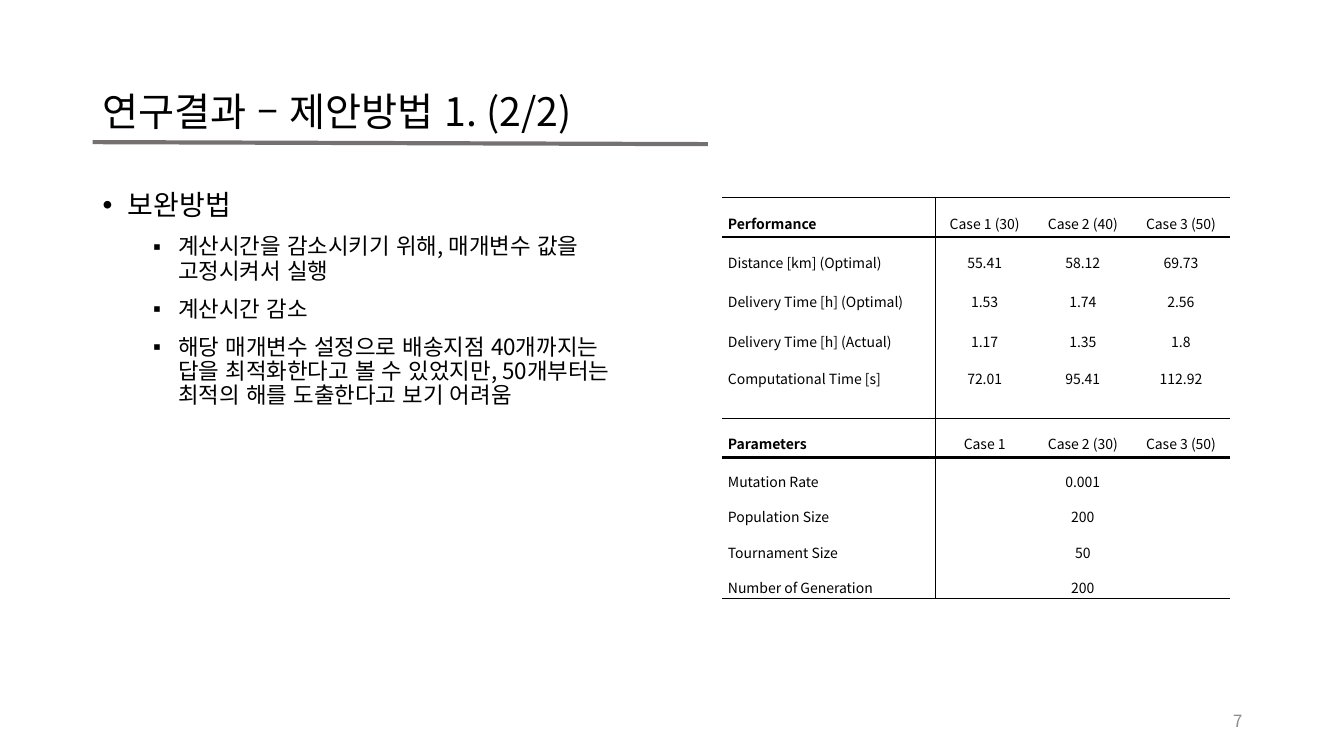
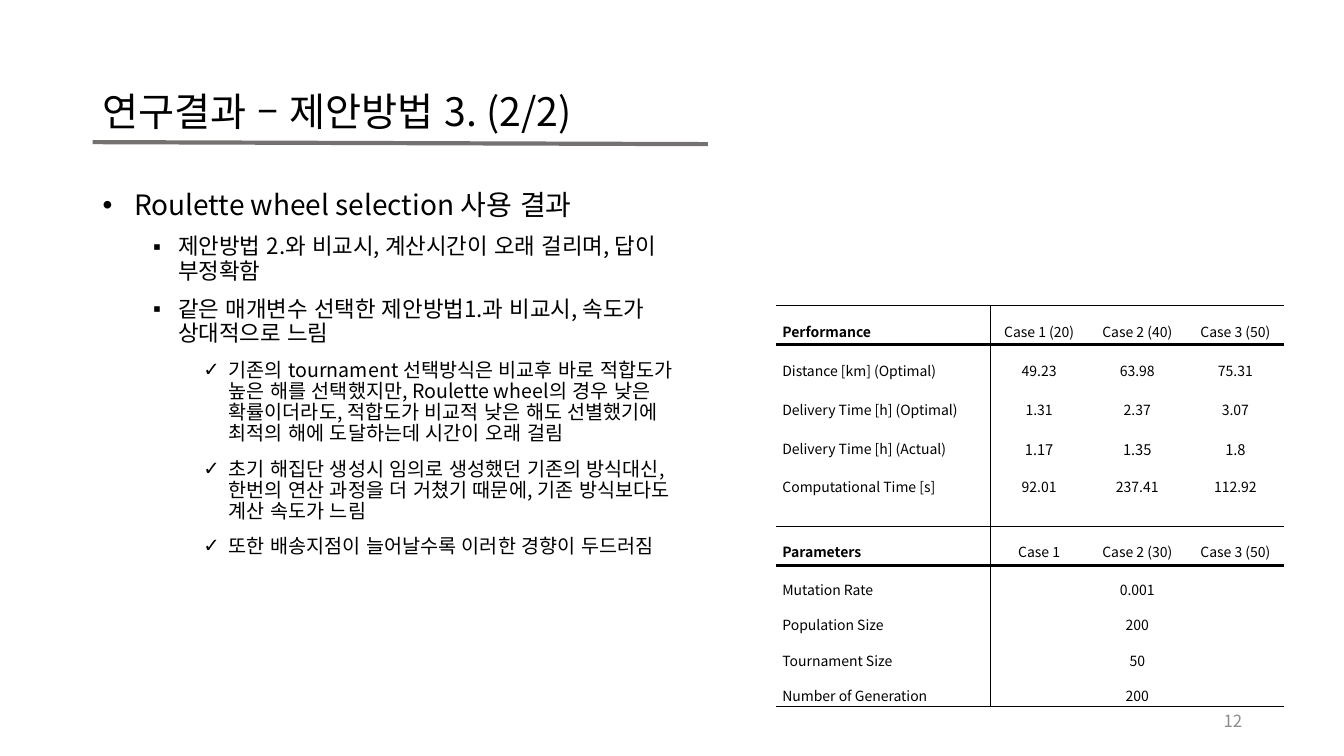
from lxml.etree import SubElement as Sub
from pptx import Presentation
from pptx.dml.color import RGBColor as RGB
from pptx.enum.lang import MSO_LANGUAGE_ID as LANG
from pptx.enum.shapes import MSO_CONNECTOR as CON
from pptx.enum.text import MSO_ANCHOR as ANC, PP_ALIGN as AL
from pptx.oxml.ns import qn
from pptx.util import Inches, Pt

BLACK = RGB(0x00, 0x00, 0x00)
GREY = RGB(0x76, 0x71, 0x71)
PALE = RGB(0x8C, 0x8C, 0x8C)
FONT = "Noto Sans CJK KR"
PLAIN = "{2D5ABB26-0587-4C30-8999-92F81FD0307C}"
THIN, THICK = 0.28, 1.98
EDGES = {0: THIN, 1: THICK, 6: THIN, 7: THICK, 11: THIN}
WIDTH, FIRST = 5.04, 2.12
COLS = [FIRST] + [(WIDTH - FIRST) / 3] * 3
TALL, LOW, GAP = 0.39, 0.35, 0.28
ROWS = [TALL] * 4 + [LOW, GAP, TALL] + [LOW] * 4
LEVELS = [("•", 20), ("▪", 16), ("✓", 14)]
LABELS = [
    "Distance [km] (Optimal)",
    "Delivery Time [h] (Optimal)",
    "Delivery Time [h] (Actual)",
    "Computational Time [s]",
]
PARAMS = [
    ["Parameters", "Case 1", "Case 2 (30)", "Case 3 (50)"],
    ["Mutation Rate", "0.001"],
    ["Population Size", "200"],
    ["Tournament Size", "50"],
    ["Number of Generation", "200"],
]


class Deck:
    """Holds the shared style and the current slide."""

    def __init__(self):
        self.prs = Presentation()
        self.prs.slide_width = Inches(13.33)
        self.prs.slide_height = Inches(7.5)
        self.slide = None

    def start(self, title, page):
        self.slide = self.prs.slides.add_slide(self.prs.slide_layouts[6])
        head = self.box(0.92, 0.4, 11.5, 1.45, ANC.MIDDLE).paragraphs[0]
        head.line_spacing = 0.9
        self.run(head, title, 28)
        self.rule(0.92, 1.41, 7.02, 1.43)
        foot = self.box(9.42, 6.95, 3, 0.4, ANC.MIDDLE).paragraphs[0]
        foot.alignment = AL.RIGHT
        self.run(foot, page, 12, PALE)

    def box(self, x, y, w, h, anchor=ANC.TOP):
        area = [Inches(v) for v in (x, y, w, h)]
        frame = self.slide.shapes.add_textbox(*area).text_frame
        frame.word_wrap = True
        frame.vertical_anchor = anchor
        return frame

    def run(self, para, text, size, color=BLACK, bold=False):
        run = para.add_run()
        run.text = text
        font = run.font
        font.name = FONT
        font.size = Pt(size)
        font.bold = bold
        font.color.rgb = color
        font.language_id = LANG.KOREAN
        Sub(font._element, qn("a:ea"), typeface=FONT)

    def rule(self, x1, y1, x2, y2):
        ends = [Inches(v) for v in (x1, y1, x2, y2)]
        line = self.slide.shapes.add_connector(CON.STRAIGHT, *ends)
        line.line.color.rgb = GREY
        line.line.width = Pt(3)
        Sub(line._element.spPr, qn("a:effectLst"))

    def body(self, width, items):
        frame = self.box(0.92, 1.85, width, 4.76)
        for i, (level, text) in enumerate(items):
            para = frame.add_paragraph() if i else frame.paragraphs[0]
            mark, size = LEVELS[level]
            props = para._p.get_or_add_pPr()
            props.set("marL", str(Inches(0.25 + 0.5 * level)))
            props.set("indent", str(Inches(-0.25)))
            Sub(props, qn("a:buFont"), typeface="Arial")
            Sub(props, qn("a:buChar"), char=mark)
            para.level = level
            para.line_spacing = 0.9
            if i:
                para.space_before = Pt(10)
            self.run(para, text, size)

    def border(self, cell, side, width):
        props = cell._tc.get_or_add_tcPr()
        line = Sub(props, qn(f"a:ln{side}"), w=str(Pt(width)))
        if width:
            fill = Sub(line, qn("a:solidFill"))
            Sub(fill, qn("a:srgbClr"), val=str(BLACK))
        else:
            Sub(line, qn("a:noFill"))

    def cell(self, cell, row, col, text, size):
        cell.margin_left = cell.margin_right = Inches(0.06)
        cell.margin_top = cell.margin_bottom = Inches(0.02)
        cell.vertical_anchor = ANC.MIDDLE
        sides = {
            "L": THIN if col == 1 else 0,
            "R": THIN if col == 0 else 0,
            "T": EDGES.get(row, 0),
            "B": EDGES.get(row + 1, 0),
        }
        for side, width in sides.items():
            self.border(cell, side, width)
        cell.fill.background()
        para = cell.text_frame.paragraphs[0]
        if text:
            para.alignment = AL.CENTER if col else AL.LEFT
            para.line_spacing = 1.6
            self.run(para, text, size, bold=not col and row in (0, 6))
        else:
            Sub(para._p, qn("a:endParaRPr"), sz="1000")

    def table(self, x, y, cases, values, sizes):
        perf = [[name, *nums] for name, nums in zip(LABELS, values)]
        data = [["Performance", *cases], *perf, [""], *PARAMS]
        area = [Inches(v) for v in (x, y, WIDTH, sum(ROWS))]
        grid = self.slide.shapes.add_table(len(ROWS), len(COLS), *area).table
        grid.first_row = grid.horz_banding = False
        grid._tbl.tblPr.find(qn("a:tableStyleId")).text = PLAIN
        for col, width in zip(grid.columns, COLS):
            col.width = Inches(width)
        for r, (height, texts) in enumerate(zip(ROWS, data)):
            grid.rows[r].height = Inches(height)
            if len(texts) == 2:
                grid.cell(r, 1).merge(grid.cell(r, 3))
            for c in range(len(COLS)):
                text = texts[c] if c < len(texts) else ""
                size = sizes.get(r, 10) if c else 10
                self.cell(grid.cell(r, c), r, c, text, size)


def main():
    deck = Deck()
    deck.start("연구결과 – 제안방법 1. (2/2)", "7")
    deck.body(5.39, [
        (0, "보완방법"),
        (1, "계산시간을 감소시키기 위해, 매개변수 값을 고정시켜서 실행"),
        (1, "계산시간 감소"),
        (1, "해당 매개변수 설정으로 배송지점 40개까지는 답을 최적화한다고 "
            "볼 수 있었지만, 50개부터는 최적의 해를 도출한다고 보기 어려움"),
    ])
    deck.table(7.16, 1.96, ["Case 1 (30)", "Case 2 (40)", "Case 3 (50)"], [
        ["55.41", "58.12", "69.73"],
        ["1.53", "1.74", "2.56"],
        ["1.17", "1.35", "1.8"],
        ["72.01", "95.41", "112.92"],
    ], {})

    deck.start("연구결과 – 제안방법 3. (2/2)", "12")
    deck.body(6.1, [
        (0, " Roulette wheel selection 사용 결과"),
        (1, "제안방법 2.와 비교시, 계산시간이 오래 걸리며, 답이 부정확함"),
        (1, "같은 매개변수 선택한 제안방법1.과 비교시, 속도가 상대적으로 느림"),
        (2, "기존의 tournament 선택방식은 비교후 바로 적합도가 높은 해를 "
            "선택했지만, Roulette wheel의 경우 낮은 확률이더라도, 적합도가 "
            "비교적 낮은 해도 선별했기에 최적의 해에 도달하는데 시간이 오래 걸림"),
        (2, "초기 해집단 생성시 임의로 생성했던 기존의 방식대신, 한번의 연산 "
            "과정을 더 거쳤기 때문에, 기존 방식보다도 계산 속도가 느림"),
        (2, "또한 배송지점이 늘어날수록 이러한 경향이 두드러짐"),
    ])
    deck.table(7.7, 3.03, ["Case 1 (20)", "Case 2 (40)", "Case 3 (50)"], [
        ["49.23", "63.98", "75.31"],
        ["1.31", "2.37", "3.07"],
        ["1.17", "1.35", "1.8"],
        ["92.01", "237.41", "112.92"],
    ], {3: 10.5})
    deck.prs.save("out.pptx")


if __name__ == "__main__":
    main()
